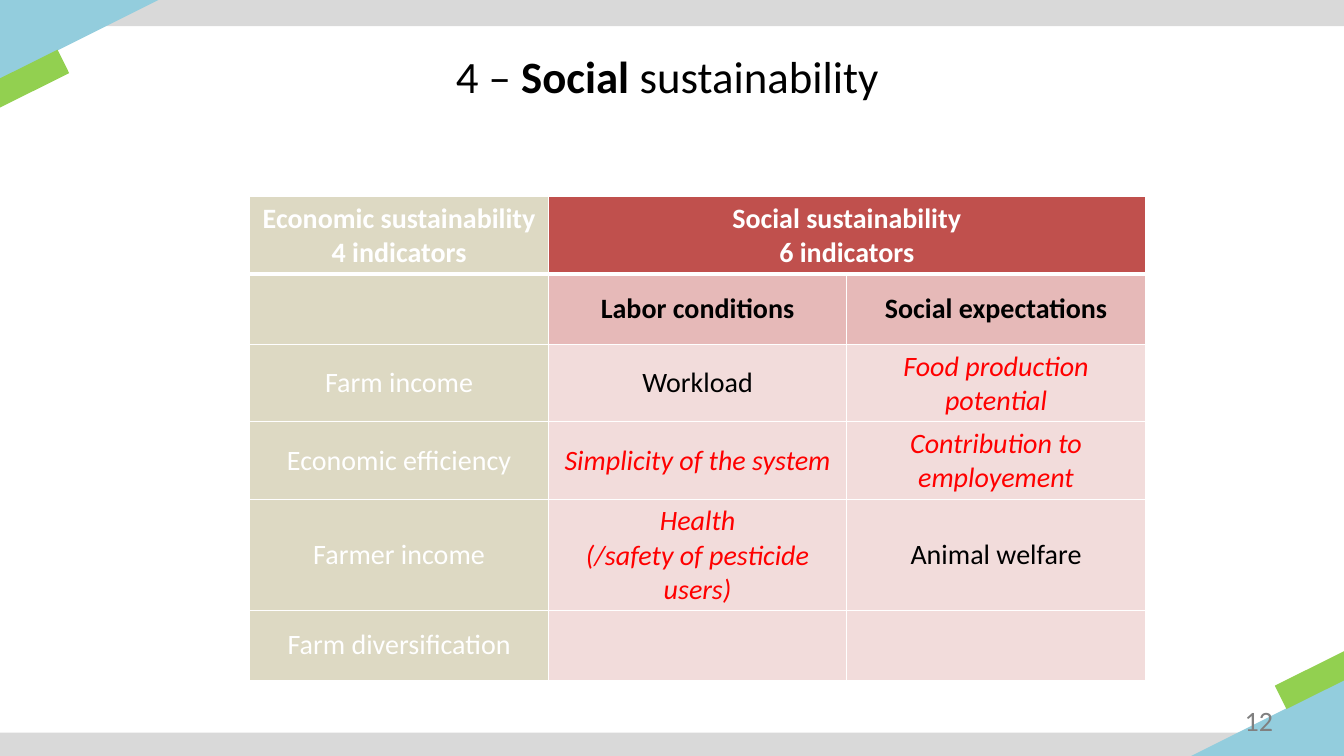
from lxml import etree
from pptx import Presentation
from pptx.dml.color import RGBColor
from pptx.enum.shapes import MSO_SHAPE
from pptx.enum.text import MSO_ANCHOR, PP_ALIGN
from pptx.oxml.ns import qn
from pptx.util import Pt

RECTANGLE = MSO_SHAPE.RECTANGLE
TRIANGLE = MSO_SHAPE.ISOSCELES_TRIANGLE
MIDDLE = MSO_ANCHOR.MIDDLE
CENTER, RIGHT = PP_ALIGN.CENTER, PP_ALIGN.RIGHT

WHITE = RGBColor(0xFF, 0xFF, 0xFF)
BLACK = RGBColor(0x00, 0x00, 0x00)
RED = RGBColor(0xFF, 0x00, 0x00)
GRAY = RGBColor(0x80, 0x80, 0x80)
BAND_GRAY = RGBColor(0xD9, 0xD9, 0xD9)
SKY = RGBColor(0x93, 0xCD, 0xDD)
GREEN = RGBColor(0x92, 0xD0, 0x50)
BEIGE = RGBColor(0xDD, 0xD9, 0xC3)
BRICK = RGBColor(0xC0, 0x50, 0x4D)
ROSE = RGBColor(0xE6, 0xB9, 0xB8)
PALE_ROSE = RGBColor(0xF2, 0xDC, 0xDB)

FONT = "Calibri"
SLIDE_WIDTH, SLIDE_HEIGHT = 960, 540
FRAME_HEIGHT = 542

HEADERS = ["Economic sustainability\n4 indicators", "Social sustainability\n6 indicators", ""]
SUBHEADERS = ["", "Labor conditions", "Social expectations"]
INDICATORS = [
    ["Farm income", "Workload", "Food production potential"],
    ["Economic efficiency", "Simplicity of the system", "Contribution to employement"],
    ["Farmer income", "Health\n(/safety of pesticide users)", "Animal welfare"],
    ["Farm diversification", "", ""],
]
PLAIN_INDICATORS = {"Workload", "Animal welfare"}


def write_text(text_frame, text, size=20, color=BLACK, bold=False, italic=False,
               align=CENTER, bold_word=None):
    """Write one paragraph per line; bold_word alone is set bold."""
    for index, line in enumerate(text.split("\n")):
        paragraph = text_frame.paragraphs[0] if index == 0 else text_frame.add_paragraph()
        paragraph.alignment = align
        pieces = line.partition(bold_word) if bold_word else [line]
        for piece in filter(None, pieces):
            run = paragraph.add_run()
            run.text = piece
            font = run.font
            font.name, font.size = FONT, Pt(size)
            font.bold, font.italic = bold or piece == bold_word, italic
            font.color.rgb = color


def add_text_box(slide, box, text, **text_format):
    text_frame = slide.shapes.add_textbox(*map(Pt, box)).text_frame
    text_frame.word_wrap = True
    text_frame.vertical_anchor = MIDDLE
    write_text(text_frame, text, **text_format)


def add_frame_part(slide, preset, box, color, rotation, turned):
    """Place a part of the frame, or its half-turn around the frame's centre."""
    left, top, width, height = box
    if turned:
        left = SLIDE_WIDTH - left - width
        top = FRAME_HEIGHT - top - height
        rotation = (rotation + 180) % 360
    shape = slide.shapes.add_shape(preset, *map(Pt, (left, top, width, height)))
    shape.shadow.inherit = False
    shape.fill.solid()
    shape.fill.fore_color.rgb = color
    shape.line.fill.background()
    shape.rotation = rotation
    return shape


def add_frame(slide):
    for turned in (False, True):
        add_frame_part(slide, RECTANGLE, (0, 0, SLIDE_WIDTH, 18.7), BAND_GRAY, 0, turned)
        corner = add_frame_part(slide, TRIANGLE, (28.3, -28.3, 56.6, 113.2), SKY, 90, turned)
        corner.adjustments[0] = 0
        add_frame_part(slide, RECTANGLE, (-8.6, 47.2, 56.9, 18.7), GREEN, 333.5, turned)


def style_cell(cell, fill, top_width, bottom_width):
    """Give the cell white borders, then its fill."""
    properties = cell._tc.get_or_add_tcPr()
    widths = {"lnL": 1, "lnR": 1, "lnT": top_width, "lnB": bottom_width}
    for side, width in widths.items():
        line = etree.SubElement(properties, qn(f"a:{side}"), w=str(Pt(width)))
        solid = etree.SubElement(line, qn("a:solidFill"))
        etree.SubElement(solid, qn("a:srgbClr"), val=str(WHITE))
    cell.fill.solid()
    cell.fill.fore_color.rgb = fill
    cell.vertical_anchor = MIDDLE


def cell_format(row, column, text):
    """Return the fill and the text format of a cell."""
    if row == 0:
        return (BRICK if column else BEIGE), {"color": WHITE, "bold": True}
    if column == 0:
        return BEIGE, {"color": WHITE}
    if row == 1:
        return ROSE, {"bold": True}
    if text in PLAIN_INDICATORS:
        return PALE_ROSE, {}
    return PALE_ROSE, {"color": RED, "italic": True}


def add_indicator_table(slide, box):
    rows = [HEADERS, SUBHEADERS, *INDICATORS]
    left, top, width, height = box
    table = slide.shapes.add_table(len(rows), len(HEADERS), *map(Pt, box)).table
    for table_column in table.columns:
        table_column.width = Pt(width / len(HEADERS))
    for table_row in table.rows:
        table_row.height = Pt(height / len(rows))
    for row, texts in enumerate(rows):
        for column, text in enumerate(texts):
            cell = table.cell(row, column)
            fill, text_format = cell_format(row, column, text)
            style_cell(cell, fill, 3 if row == 1 else 1, 3 if row == 0 else 1)
            write_text(cell.text_frame, text, **text_format)
    table.cell(0, 1).merge(table.cell(0, 2))


def main():
    presentation = Presentation()
    presentation.slide_width = Pt(SLIDE_WIDTH)
    presentation.slide_height = Pt(SLIDE_HEIGHT)
    slide = presentation.slides.add_slide(presentation.slide_layouts[6])
    add_frame(slide)
    add_text_box(slide, (857.5, 500.4, 59, 28.8), "12", color=GRAY, align=RIGHT)
    add_text_box(slide, (36.7, 28.8, 880, 49.7), "4 – Social sustainability",
                 size=32, bold_word="Social")
    add_indicator_table(slide, (178.5, 140.4, 639.6, 302.4))
    presentation.save("out.pptx")


if __name__ == "__main__":
    main()
